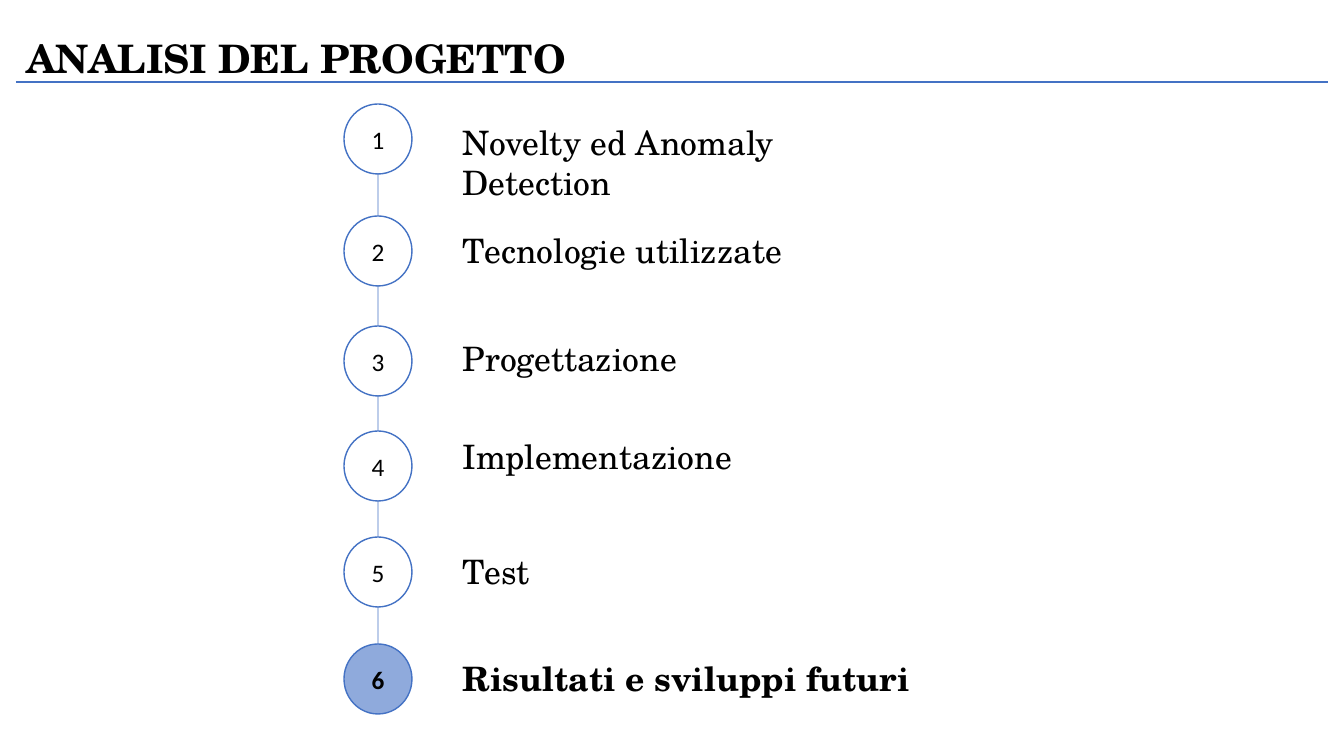
from lxml import etree
from pptx import Presentation
from pptx.dml.color import RGBColor
from pptx.enum.shapes import MSO_CONNECTOR, MSO_SHAPE
from pptx.enum.text import MSO_ANCHOR, MSO_AUTO_SIZE, PP_ALIGN
from pptx.oxml.ns import qn
from pptx.util import Emu, Pt

TITLE = "ANALISI DEL PROGETTO"
# label, top of circle, top of label
STEPS = [
    ("Novelty ed Anomaly Detection", 104, 117),
    ("Tecnologie utilizzate", 216, 225),
    ("Progettazione", 326, 333),
    ("Implementazione", 431, 431),
    ("Test", 537, 546),
    ("Risultati e sviluppi futuri", 644, 653),
]
CURRENT = 6

BLACK = RGBColor(0x00, 0x00, 0x00)
BLUE = RGBColor(0x44, 0x72, 0xC4)
LIGHT_BLUE = RGBColor(0x8F, 0xAA, 0xDC)
SERIF = "TeX Gyre Schola"
SANS = "Calibri"

SLIDE_W, SLIDE_H = 1344, 756
MARGIN = 16
RULE_Y = 82
CIRCLE_X, CIRCLE_W, CIRCLE_H = 344, 68, 70
LABEL_X, LABEL_W, LABEL_H = 453, 472, 50


def px(n):
    return Emu(round(n * 914400 / 100.8))


def write(sp, text, align=PP_ALIGN.LEFT, anchor=MSO_ANCHOR.TOP, **font):
    tf = sp.text_frame
    frame = {"word_wrap": True, "auto_size": MSO_AUTO_SIZE.NONE,
             "vertical_anchor": anchor}
    for name, value in frame.items():
        setattr(tf, name, value)
    p = tf.paragraphs[0]
    p.alignment = align
    r = p.add_run()
    r.text = text
    r.font.color.rgb = BLACK
    for name, value in font.items():
        setattr(r.font, name, value)


def add_line(shapes, x1, y1, x2, y2, width):
    line = shapes.add_connector(MSO_CONNECTOR.STRAIGHT,
                                px(x1), px(y1), px(x2), px(y2))
    line.line.color.rgb = BLUE
    line.line.width = Pt(width)
    etree.SubElement(line._element.spPr, qn("a:effectLst"))
    return line


def add_circle(shapes, number, top):
    sp = shapes.add_shape(MSO_SHAPE.FLOWCHART_CONNECTOR, px(CIRCLE_X), px(top),
                          px(CIRCLE_W), px(CIRCLE_H))
    sp.shadow.inherit = False
    if number == CURRENT:
        sp.fill.solid()
        sp.fill.fore_color.rgb = LIGHT_BLUE
    else:
        sp.fill.background()
    sp.line.color.rgb = BLUE
    sp.line.width = Pt(1)
    write(sp, str(number), PP_ALIGN.CENTER, MSO_ANCHOR.MIDDLE,
          name=SANS, size=Pt(18), bold=number == CURRENT)
    return sp


def main():
    prs = Presentation()
    prs.slide_width, prs.slide_height = px(SLIDE_W), px(SLIDE_H)
    slide = prs.slides.add_slide(prs.slide_layouts[5])
    shapes = slide.shapes

    title = shapes.title
    box = {"left": MARGIN, "top": 29, "width": 655, "height": 105}
    for name, value in box.items():
        setattr(title, name, px(value))
    write(title, TITLE, name=SERIF, size=Pt(28), bold=True)
    add_line(shapes, MARGIN, RULE_Y, SLIDE_W - MARGIN, RULE_Y, 1.5)

    center = CIRCLE_X + CIRCLE_W / 2
    previous_bottom = None
    for number, (label, circle_top, label_top) in enumerate(STEPS, 1):
        circle = add_circle(shapes, number, circle_top)
        if previous_bottom is not None:
            link = add_line(shapes, center, previous_bottom,
                            center, circle_top, 0.5)
            link.end_connect(circle, 0)
        previous_bottom = circle_top + CIRCLE_H

        tb = shapes.add_textbox(px(LABEL_X), px(label_top),
                                px(LABEL_W), px(LABEL_H))
        write(tb, label, name=SERIF, size=Pt(24), bold=number == CURRENT)

    prs.save("out.pptx")


if __name__ == "__main__":
    main()
